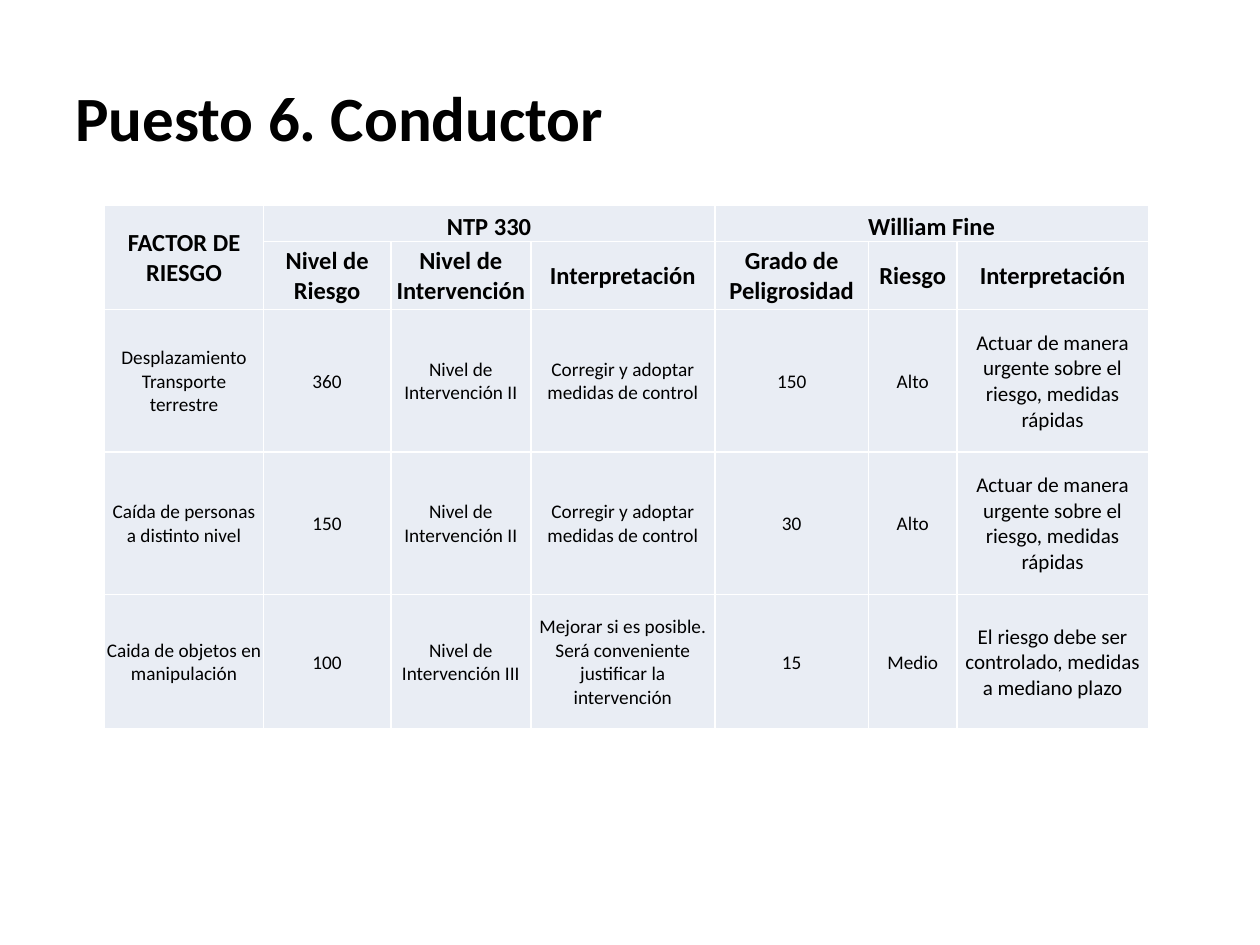
"""Build the risk assessment slide for the driver's post."""
from lxml import etree
from pptx import Presentation
from pptx import util as u
from pptx.dml.color import RGBColor
from pptx.enum import text
from pptx.oxml import ns

BLACK = RGBColor(0x00, 0x00, 0x00)
WHITE = RGBColor(0xFF, 0xFF, 0xFF)
PALE = RGBColor(0xE9, 0xED, 0xF4)

TITLE = "Puesto 6. Conductor"
TITLE_PLACE = (1.27, 0.76, 22.86, 3.18)
TABLE_CORNER = (2.11, 4.13)
COLUMN_WIDTHS = (3.2, 2.57, 2.82, 3.71, 3.1, 1.78, 3.86)
ROW_HEIGHTS = (0.74, 1.37, 2.87, 2.87, 2.72)
URGENT = "Actuar de manera urgente sobre el riesgo, medidas rápidas"
CORRECT = "Corregir y adoptar medidas de control"
ROWS = [
    ("FACTOR DE RIESGO", "NTP 330", "", "", "William Fine", "", ""),
    ("", "Nivel de Riesgo", "Nivel de Intervención", "Interpretación",
     "Grado de Peligrosidad", "Riesgo", "Interpretación"),
    ("Desplazamiento Transporte terrestre", "360", "Nivel de Intervención II",
     CORRECT, "150", "Alto", URGENT),
    ("Caída de personas a distinto nivel", "150", "Nivel de Intervención II",
     CORRECT, "30", "Alto", URGENT),
    ("Caida de objetos en manipulación", "100", "Nivel de Intervención III",
     "Mejorar si es posible. Será conveniente justificar la intervención",
     "15", "Medio", "El riesgo debe ser controlado, medidas a mediano plazo"),
]
MERGES = [((0, 0), (1, 0)), ((0, 1), (0, 3)), ((0, 4), (0, 6))]
HEADER_ROWS = 2
LAST_COLUMN = len(COLUMN_WIDTHS) - 1
CELL_FORMAT = {
    "margin_left": u.Cm(0.03), "margin_right": u.Cm(0.03),
    "margin_top": u.Cm(0.03), "margin_bottom": 0,
}


def apply(target, values):
    for name, value in values.items():
        setattr(target, name, value)


def write(para, words, size, bold):
    span = para.add_run()
    span.text = words
    apply(span.font, {"name": "Calibri", "size": u.Pt(size), "bold": bold})
    span.font.color.rgb = BLACK


def add_borders(cell):
    properties = cell._tc.get_or_add_tcPr()
    for side in ("a:lnL", "a:lnR", "a:lnT", "a:lnB"):
        line = etree.SubElement(properties, ns.qn(side), w=str(u.Pt(1)))
        fill = etree.SubElement(line, ns.qn("a:solidFill"))
        etree.SubElement(fill, ns.qn("a:srgbClr"), val=str(WHITE))


def add_title(page):
    box = page.shapes.add_textbox(*map(u.Cm, TITLE_PLACE))
    apply(box.text_frame, {
        "word_wrap": True, "vertical_anchor": text.MSO_ANCHOR.MIDDLE})
    write(box.text_frame.paragraphs[0], TITLE, 36, True)


def fill_cell(cell, row, column, words):
    apply(cell, CELL_FORMAT)
    group_heading = row == 0 and column > 0
    cell.vertical_anchor = (
        text.MSO_ANCHOR.BOTTOM if group_heading else text.MSO_ANCHOR.MIDDLE)
    add_borders(cell)
    cell.fill.solid()
    cell.fill.fore_color.rgb = PALE
    if words:
        para = cell.text_frame.paragraphs[0]
        para.alignment = text.PP_ALIGN.CENTER
        header = row < HEADER_ROWS
        size = 14 if header else 12 if column == LAST_COLUMN else 11
        write(para, words, size, header)


def add_risk_table(page):
    extent = (sum(COLUMN_WIDTHS), sum(ROW_HEIGHTS))
    table = page.shapes.add_table(
        len(ROWS), len(COLUMN_WIDTHS), *map(u.Cm, TABLE_CORNER + extent)).table
    apply(table, {"first_row": False, "horz_banding": False})
    for column, width in zip(table.columns, COLUMN_WIDTHS):
        column.width = u.Cm(width)
    for row, height in zip(table.rows, ROW_HEIGHTS):
        row.height = u.Cm(height)
    for start, end in MERGES:
        table.cell(*start).merge(table.cell(*end))
    for row, entries in enumerate(ROWS):
        for column, words in enumerate(entries):
            fill_cell(table.cell(row, column), row, column, words)


def main():
    deck = Presentation()
    apply(deck, {"slide_width": u.Cm(25.4), "slide_height": u.Cm(19.05)})
    page = deck.slides.add_slide(deck.slide_layouts[6])
    add_title(page)
    add_risk_table(page)
    deck.save("out.pptx")


if __name__ == "__main__":
    main()
